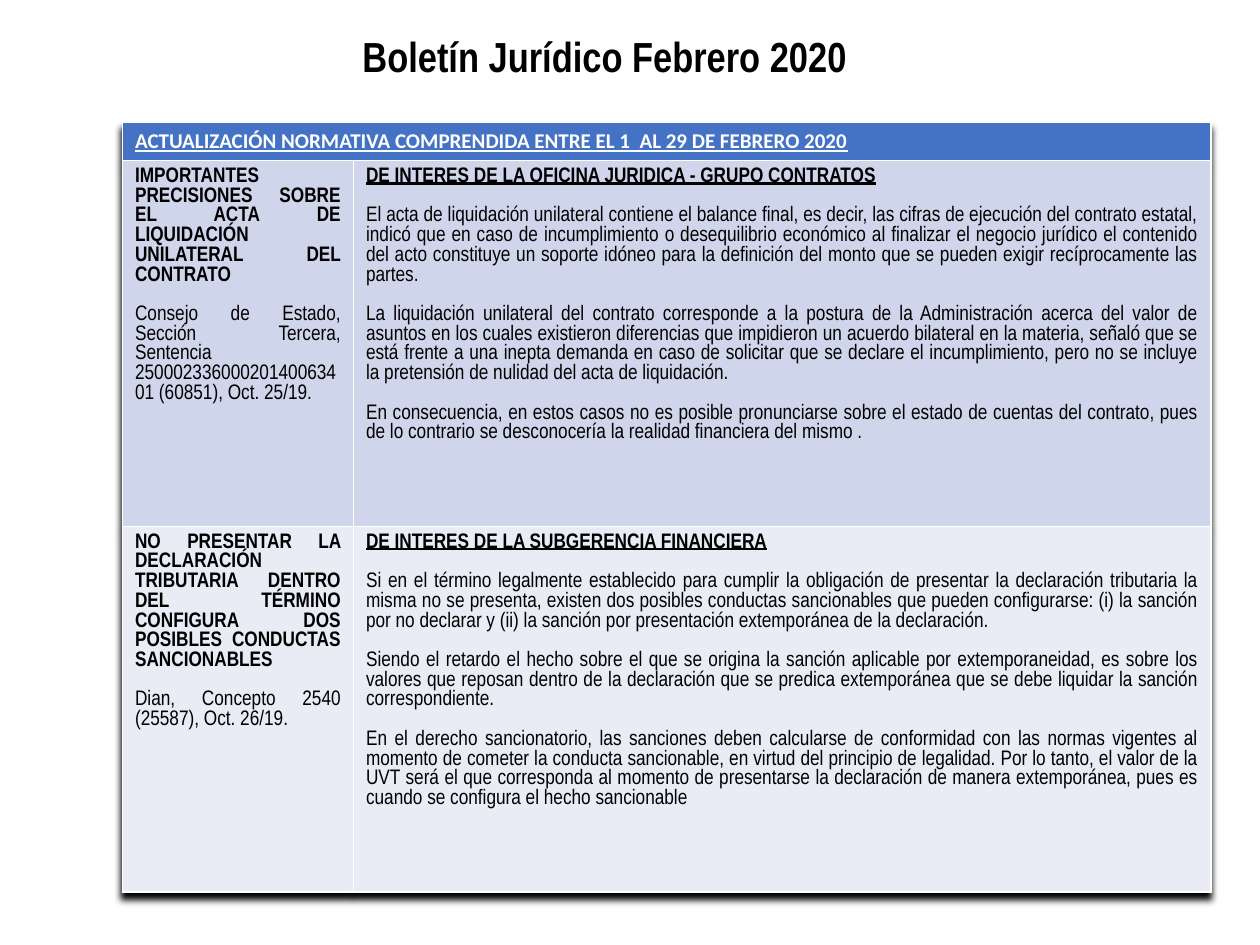
"""Build the February 2020 legal bulletin slide."""
from dataclasses import dataclass
from lxml import etree
from pptx import Presentation
from pptx import util as u
from pptx.dml import color
from pptx.enum import text
from pptx.oxml import ns


@dataclass(frozen=True)
class Theme:
    ink: str = "000000"
    white: str = "FFFFFF"
    head: str = "4472C4"
    bands: tuple = ("CFD5EA", "E9EBF5")
    body: str = "Arial Narrow"
    label: str = "Calibri"
    big: float = 24
    small: float = 12
    gap: float = 11.25


NEWS = [
    (
        ["IMPORTANTES PRECISIONES SOBRE EL ACTA DE LIQUIDACIÓN UNILATERAL DEL CONTRATO",
         "Consejo de Estado, Sección Tercera, Sentencia 25000233600020140063401 (60851), Oct. 25/19."],
        ["DE INTERES DE LA OFICINA JURIDICA - GRUPO CONTRATOS",
         "El acta de liquidación unilateral contiene el balance final, es decir, las cifras de "
         "ejecución del contrato estatal, indicó que en caso de incumplimiento o desequilibrio "
         "económico al finalizar el negocio jurídico el contenido del acto constituye un soporte "
         "idóneo para la definición del monto que se pueden exigir recíprocamente las partes.",
         "La liquidación unilateral del contrato corresponde a la postura de la Administración "
         "acerca del valor de asuntos en los cuales existieron diferencias que impidieron un "
         "acuerdo bilateral en la materia, señaló que se está frente a una inepta demanda en caso "
         "de solicitar que se declare el incumplimiento, pero no se incluye la pretensión de "
         "nulidad del acta de liquidación.",
         "En consecuencia, en estos casos no es posible pronunciarse sobre el estado de cuentas "
         "del contrato, pues de lo contrario se desconocería la realidad financiera del mismo ."],
    ),
    (
        ["NO PRESENTAR LA DECLARACIÓN TRIBUTARIA DENTRO DEL TÉRMINO CONFIGURA DOS POSIBLES "
         "CONDUCTAS SANCIONABLES",
         "Dian, Concepto 2540 (25587), Oct. 26/19."],
        ["DE INTERES DE LA SUBGERENCIA FINANCIERA",
         "Si en el término legalmente establecido para cumplir la obligación de presentar la "
         "declaración tributaria la misma no se presenta, existen dos posibles conductas "
         "sancionables que pueden configurarse: (i) la sanción por no declarar y (ii) la sanción "
         "por presentación extemporánea de la declaración.",
         "Siendo el retardo el hecho sobre el que se origina la sanción aplicable por "
         "extemporaneidad, es sobre los valores que reposan dentro de la declaración que se "
         "predica extemporánea que se debe liquidar la sanción correspondiente.",
         "En el derecho sancionatorio, las sanciones deben calcularse de conformidad con las "
         "normas vigentes al momento de cometer la conducta sancionable, en virtud del principio "
         "de legalidad. Por lo tanto, el valor de la UVT será el que corresponda al momento de "
         "presentarse la declaración de manera extemporánea, pues es cuando se configura el hecho "
         "sancionable"],
    ),
]


class Deck:
    def __init__(self, theme):
        self.theme = theme
        self.show = Presentation()
        self.show.slide_width, self.show.slide_height = u.Pt(720), u.Pt(540)
        self.slide = self.show.slides.add_slide(self.show.slide_layouts[5])

    def words(self, para, line, align, tone, **form):
        para.alignment = align
        run = para.add_run()
        run.text = line
        for key, value in form.items():
            setattr(run.font, key, value)
        run.font.color.rgb = color.RGBColor.from_string(tone)

    def title(self, line, left, top, width, height):
        box = self.slide.shapes.title
        place = dict(left=left, top=top, width=width, height=height)
        for key, value in place.items():
            setattr(box, key, u.Pt(value))
        self.words(box.text_frame.paragraphs[0], line, text.PP_ALIGN.CENTER, self.theme.ink,
                   name=self.theme.body, size=u.Pt(self.theme.big), bold=True)

    def table(self, left, top, cols, rows):
        frame = self.slide.shapes.add_table(len(rows), len(cols), u.Pt(left), u.Pt(top),
                                            u.Pt(sum(cols)), u.Pt(sum(rows)))
        grid = frame.table
        for col, width in zip(grid.columns, cols):
            col.width = u.Pt(width)
        for row, height in zip(grid.rows, rows):
            row.height = u.Pt(height)
        self.shade(frame)
        return grid

    def shade(self, frame):
        props = frame._element.graphic.graphicData.tbl.tblPr
        fx = etree.Element(ns.qn("a:effectLst"))
        drop = etree.SubElement(fx, ns.qn("a:outerShdw"), blurRad="50800", dist="50800",
                                dir="5400000", algn="t", rotWithShape="0")
        etree.SubElement(drop, ns.qn("a:prstClr"), val="black")
        props.insert(0, fx)

    def cell(self, cell, lines, tone, ink, font, under):
        cell.fill.solid()
        cell.fill.fore_color.rgb = color.RGBColor.from_string(tone)
        for i, line in enumerate(lines):
            para = cell.text_frame.add_paragraph() if i else cell.text_frame.paragraphs[0]
            if i:
                para.space_before = u.Pt(self.theme.gap)
            self.words(para, line, text.PP_ALIGN.JUSTIFY, ink, name=font,
                       size=u.Pt(self.theme.small), bold=i == 0, underline=under and i == 0)


def main():
    theme = Theme()
    deck = Deck(theme)
    deck.title("Boletín Jurídico Febrero 2020", 32, 14, 627, 36)
    grid = deck.table(70, 70, (132, 490), (21, 209, 209))
    grid.cell(0, 0).merge(grid.cell(0, 1))
    deck.cell(grid.cell(0, 0),
              ["ACTUALIZACIÓN NORMATIVA COMPRENDIDA ENTRE EL 1  AL 29 DE FEBRERO 2020"],
              theme.head, theme.white, theme.label, True)
    for r, (item, tone) in enumerate(zip(NEWS, theme.bands), 1):
        for c, lines in enumerate(item):
            deck.cell(grid.cell(r, c), lines, tone, theme.ink, theme.body, c == 1)
    deck.show.save("out.pptx")


if __name__ == "__main__":
    main()
